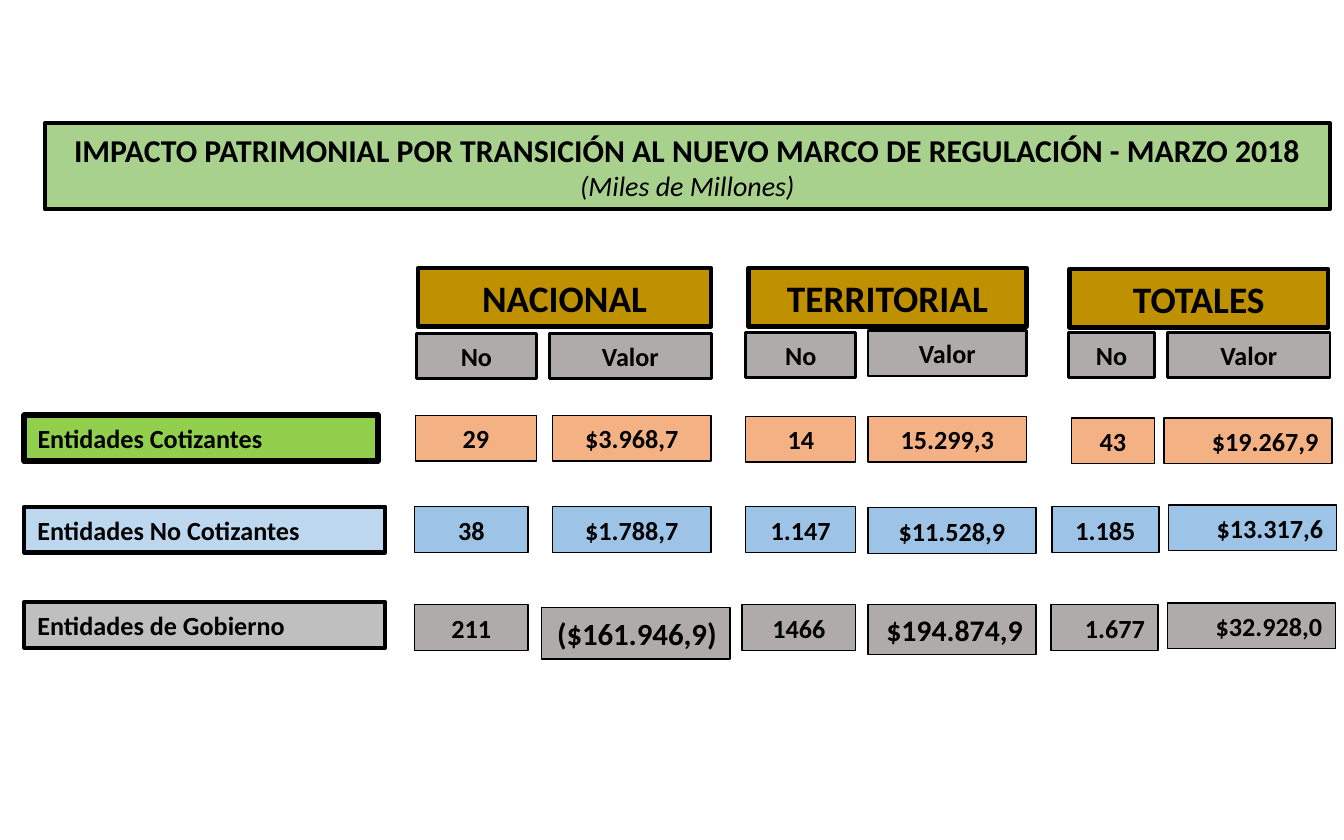
from pptx import Presentation
from pptx.dml.color import RGBColor
from pptx.enum.shapes import MSO_SHAPE
from pptx.enum.text import MSO_ANCHOR, MSO_AUTO_SIZE, PP_ALIGN
from pptx.util import Pt

HUES = {
    "ink": "000000",
    "title": "A9D18E",
    "gold": "BF9000",
    "grey": "AFABAB",
    "silver": "BFBFBF",
    "green": "91CF4D",
    "peach": "F4B183",
    "blue": "9DC3E6",
    "pale": "BDD7EE",
}
LEFT, MID, RIGHT = PP_ALIGN.LEFT, PP_ALIGN.CENTER, PP_ALIGN.RIGHT
TALL = 24.5

GROUPS = [
    ("NACIONAL", 224, 143.5, 157),
    ("TERRITORIAL", 401, 143.5, 149),
    ("TOTALES", 573, 144, 138.5),
]
HEADS = [
    ("No", 223, 178.5, 64.5),
    ("Valor", 294.5, 178.5, 86.5),
    ("No", 399.5, 178, 59),
    ("Valor", 465, 177, 85),
    ("No", 572.5, 178, 46),
    ("Valor", 625.5, 178, 87),
]
LABELS = [
    ("Entidades Cotizantes", 222.5, 189.5, "green", 3),
    ("Entidades No Cotizantes", 271.5, 193.5, "pale", 2.25),
    ("Entidades de Gobierno", 322.5, 193.5, "silver", 2.25),
]
ROWS = {
    "peach": [
        ("29", 222.5, 222.5, 65, MID),
        ("$3.968,7", 296, 222.5, 85, MID),
        ("14", 399.5, 223, 59, MID),
        ("15.299,3", 465, 223, 85, MID),
        ("43", 574, 224, 44.5, MID),
        ("$19.267,9", 623.5, 224, 90, RIGHT),
    ],
    "blue": [
        ("38", 222, 271.5, 61, MID),
        ("$1.788,7", 296, 271.5, 85, MID),
        ("1.147", 399.5, 271.5, 59, MID),
        ("$11.528,9", 465, 272, 90, MID),
        ("1.185", 563.5, 271.5, 57.5, MID),
        ("$13.317,6", 626, 270.5, 90, RIGHT),
    ],
    "grey": [
        ("211", 222, 324, 61, MID),
        ("($161.946,9)", 290, 325.5, 101, RIGHT, 27.5, 16.5),
        ("1466", 397.5, 324, 61, MID),
        ("$194.874,9", 465, 324, 90, RIGHT, 26.5, 16),
        ("1.677", 563, 324, 57.5, RIGHT),
        ("$32.928,0", 625.5, 323, 90, RIGHT),
    ],
}


def hue(name):
    return RGBColor.from_string(HUES[name])


def paint(shape, fill, line):
    shape.fill.solid()
    shape.fill.fore_color.rgb = hue(fill)
    shape.line.color.rgb = hue("ink")
    shape.line.width = Pt(line)


def style(para, size, align, bold=True, slant=False):
    para.alignment = align
    para.line_spacing = 1.0
    font = para.font
    font.name = "Calibri"
    font.size = Pt(size)
    font.bold = bold
    font.italic = slant
    font.color.rgb = hue("ink")


def set_up(frame):
    frame.word_wrap = True
    frame.auto_size = MSO_AUTO_SIZE.NONE
    frame.vertical_anchor = MSO_ANCHOR.MIDDLE


def add_box(slide, text, left, top, width, align=MID, height=TALL, size=14,
            fill="grey", line=0.75):
    box = slide.shapes.add_shape(
        MSO_SHAPE.RECTANGLE, Pt(left), Pt(top), Pt(width), Pt(height))
    box.shadow.inherit = False
    paint(box, fill, line)
    set_up(box.text_frame)
    box.text_frame.text = text
    style(box.text_frame.paragraphs[0], size, align)


def add_title(slide):
    title = slide.shapes.title
    title.left, title.top = Pt(24), Pt(66)
    title.width, title.height = Pt(688.5), Pt(46)
    paint(title, "title", 2.25)
    frame = title.text_frame
    set_up(frame)
    frame.text = ("IMPACTO PATRIMONIAL POR TRANSICIÓN AL NUEVO MARCO "
                  "DE REGULACIÓN - MARZO 2018\n(Miles de Millones)")
    main_line, unit = frame.paragraphs
    style(main_line, 17, MID)
    style(unit, 15, MID, bold=False, slant=True)


def main():
    deck = Presentation()
    deck.slide_width, deck.slide_height = Pt(720), Pt(450)
    slide = deck.slides.add_slide(deck.slide_layouts[5])
    add_title(slide)
    for text, top, width, fill, line in LABELS:
        add_box(slide, text, 13, top, width, LEFT, fill=fill, line=line)
    for group in GROUPS:
        add_box(slide, *group, height=31.5, size=20, fill="gold", line=2.25)
    for fill, cells in ROWS.items():
        for cell in cells:
            add_box(slide, *cell, fill=fill)
    for head in HEADS:
        add_box(slide, *head, line=1.5)
    deck.save("out.pptx")


if __name__ == "__main__":
    main()
